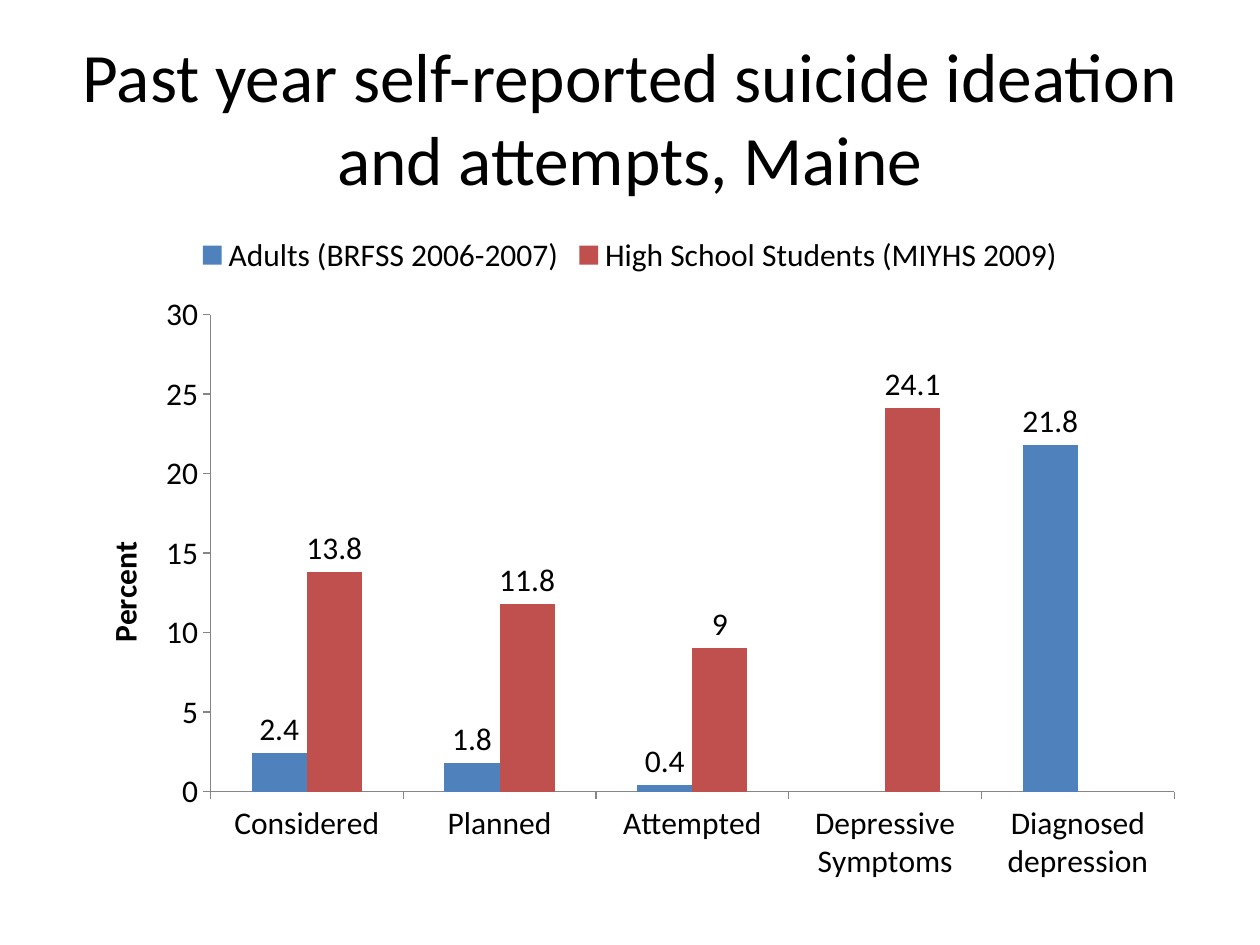
from lxml import etree
from pptx import Presentation
from pptx.chart.data import CategoryChartData
from pptx.dml.color import RGBColor
from pptx.enum.chart import XL_CHART_TYPE, XL_LABEL_POSITION, XL_LEGEND_POSITION, XL_TICK_MARK
from pptx.enum.text import MSO_ANCHOR, PP_ALIGN
from pptx.oxml.ns import qn
from pptx.util import Pt

COLUMN = XL_CHART_TYPE.COLUMN_CLUSTERED
ABOVE = XL_LABEL_POSITION.OUTSIDE_END
TOP = XL_LEGEND_POSITION.TOP
OUT = XL_TICK_MARK.OUTSIDE
MIDDLE = MSO_ANCHOR.MIDDLE
CENTER = PP_ALIGN.CENTER

HUES = {"text": "000000", "axis": "868686", "adult": "4F81BD", "teen": "C0504D"}
GROUPS = ["Considered", "Planned", "Attempted", "Depressive Symptoms", "Diagnosed depression"]
RATES = [
    ("Adults (BRFSS 2006-2007)", "adult", [2.4, 1.8, 0.4, None, 21.8]),
    ("High School Students (MIYHS 2009)", "teen", [13.8, 11.8, 9, 24.1, None]),
]


def color(name):
    return RGBColor.from_string(HUES[name])


def place(parent, index, **parts):
    for old in parent.findall(qn("c:layout")):
        parent.remove(old)
    layout = etree.Element(qn("c:layout"))
    manual = etree.SubElement(layout, qn("c:manualLayout"))
    for tag, value in parts.items():
        etree.SubElement(manual, qn("c:" + tag)).set("val", str(value))
    parent.insert(index, layout)


class Deck:
    def __init__(self, width, height, face):
        self.file = Presentation()
        self.file.slide_width = Pt(width)
        self.file.slide_height = Pt(height)
        self.face = face
        self.slide = self.file.slides.add_slide(self.file.slide_layouts[5])

    def style(self, font, size, bold=False):
        font.name = self.face
        font.size = Pt(size)
        font.bold = bold
        font.color.rgb = color("text")

    def title(self, text, left, top, width, height, size):
        shape = self.slide.shapes.title
        shape.left, shape.top = Pt(left), Pt(top)
        shape.width, shape.height = Pt(width), Pt(height)
        frame = shape.text_frame
        frame.text = text
        frame.word_wrap = True
        frame.vertical_anchor = MIDDLE
        line = frame.paragraphs[0]
        line.alignment = CENTER
        self.style(line.runs[0].font, size)

    def axis(self, axis):
        axis.has_major_gridlines = False
        axis.major_tick_mark = OUT
        axis.format.line.color.rgb = color("axis")
        axis.format.line.width = Pt(0.75)

    def columns(self, left, top, width, height, size, label):
        data = CategoryChartData()
        data.categories = GROUPS
        for name, hue, values in RATES:
            data.add_series(name, values)
        chart = self.slide.shapes.add_chart(
            COLUMN, Pt(left), Pt(top), Pt(width), Pt(height), data).chart
        self.style(chart.font, size)
        chart.has_title = False
        chart.has_legend = True
        chart.legend.position = TOP
        chart.legend.include_in_layout = False

        plot = chart.plots[0]
        plot.gap_width = 150
        plot.overlap = 0
        plot.vary_by_categories = False
        for series, (name, hue, values) in zip(plot.series, RATES):
            series.format.fill.solid()
            series.format.fill.fore_color.rgb = color(hue)
            series.data_labels.show_value = True
            series.data_labels.position = ABOVE

        self.axis(chart.category_axis)
        scale = chart.value_axis
        self.axis(scale)
        scale.minimum_scale, scale.maximum_scale, scale.major_unit = 0, 30, 5
        title = scale.axis_title
        title.text_frame.text = label
        self.style(title.text_frame.paragraphs[0].runs[0].font, size, True)

        area = chart.element.find(".//" + qn("c:plotArea"))
        place(area, 0, layoutTarget="inner", xMode="edge", yMode="edge",
              x=0.13, y=0.14, w=0.85, h=0.71)
        place(area.find(".//" + qn("c:title")), 1, xMode="edge", yMode="edge", x=0.03, y=0.47)

    def save(self):
        self.file.save("out.pptx")


def main():
    deck = Deck(720, 540, "Calibri")
    deck.title("Past year self-reported suicide ideation and attempts, Maine",
               36, 21.6, 648, 90, 39.6)
    deck.columns(36, 126, 648, 384, 18, "Percent")
    deck.save()


if __name__ == "__main__":
    main()
